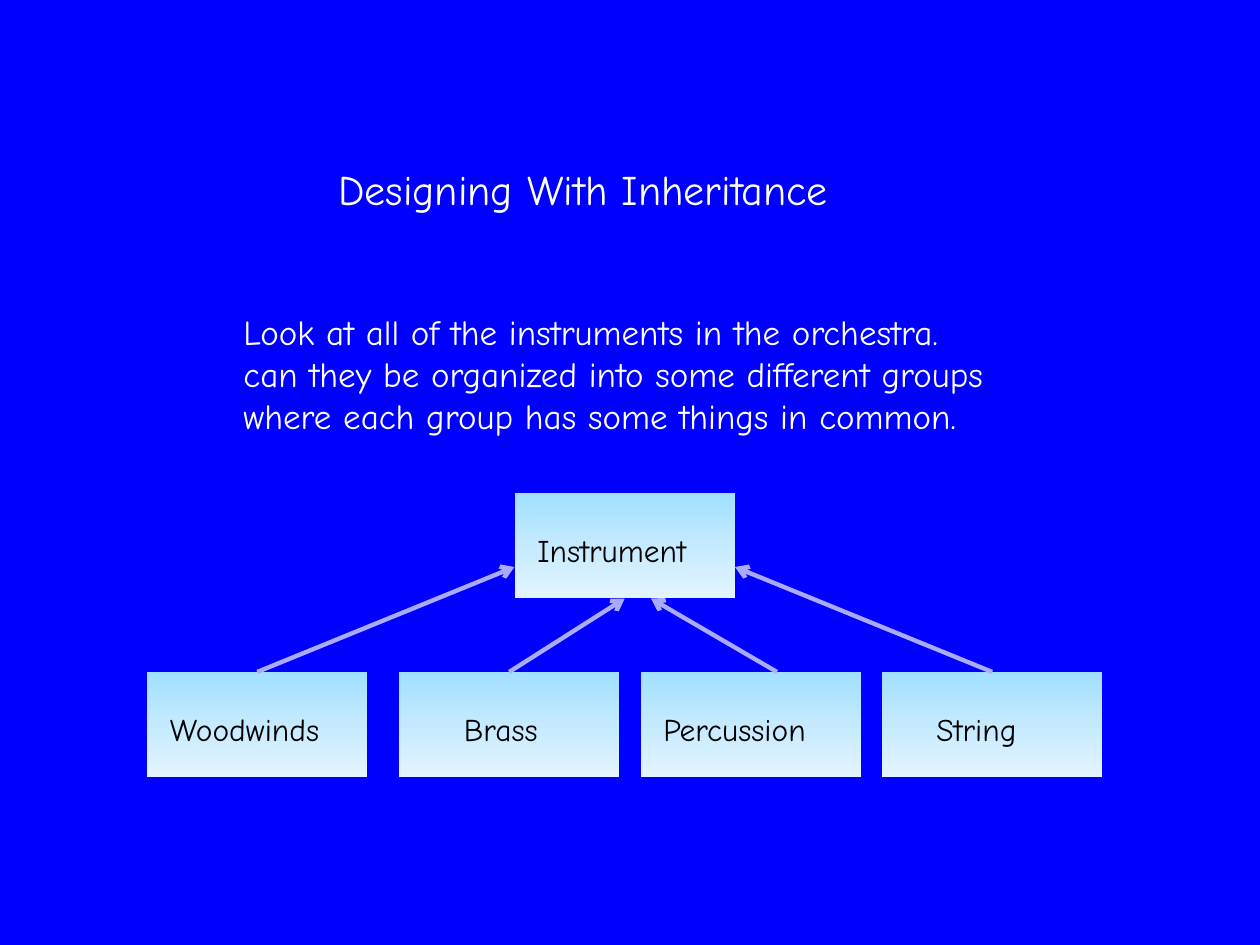
"""Build a slide showing an inheritance tree of orchestra instruments."""
import copy

import pptx
import pptx.dml.color
import pptx.enum.shapes
import pptx.enum.text
import pptx.oxml
import pptx.oxml.ns
import pptx.util

Pt = pptx.util.Pt
TOP, LEFT, BOTTOM, RIGHT = range(4)


def color(hex_text):
    return pptx.dml.color.RGBColor.from_string(hex_text)


def apply(target, values):
    for name, value in values.items():
        setattr(target, name, value)


class SlideBuilder:
    font_name = "Comic Neue"
    background = "0000FF"
    light = "FFFFFF"
    dark = "000000"
    arrow_color = "AAAAFF"
    gradient = ((0, "A0DFFF"), (0.5, "C5EAFF"), (1, "E3F4FF"))
    box_width, box_height = 126, 60
    frame_format = {
        "word_wrap": True,
        "auto_size": pptx.enum.text.MSO_AUTO_SIZE.NONE,
        "vertical_anchor": pptx.enum.text.MSO_ANCHOR.TOP,
        "margin_left": Pt(7.2),
        "margin_right": Pt(7.2),
        "margin_top": Pt(3.6),
        "margin_bottom": Pt(3.6),
    }

    def __init__(self, deck):
        self.slide = deck.slides.add_slide(deck.slide_layouts[5])
        fill = self.slide.background.fill
        fill.solid()
        fill.fore_color.rgb = color(self.background)

    def fill_text(self, box, lines, size, hex_text):
        frame = box.text_frame
        apply(frame, self.frame_format)
        for index, line in enumerate(lines):
            para = frame.add_paragraph() if index else frame.paragraphs[0]
            para.alignment = pptx.enum.text.PP_ALIGN.LEFT
            span = para.add_run()
            span.text = line
            apply(span.font, {"name": self.font_name, "size": Pt(size), "bold": False})
            span.font.color.rgb = color(hex_text)

    def title(self, text, left, top, width, height):
        box = self.slide.shapes.title
        apply(box, {"left": Pt(left), "top": Pt(top), "width": Pt(width), "height": Pt(height)})
        self.fill_text(box, [text], 24, self.light)

    def text(self, lines, left, top, width, height, size, hex_text):
        box = self.slide.shapes.add_textbox(Pt(left), Pt(top), Pt(width), Pt(height))
        self.fill_text(box, lines, size, hex_text)

    def class_box(self, name, left, top, indent):
        box = self.slide.shapes.add_shape(
            pptx.enum.shapes.MSO_SHAPE.RECTANGLE,
            Pt(left), Pt(top), Pt(self.box_width), Pt(self.box_height))
        box.shadow.inherit = False
        box.line.fill.background()
        box.fill.gradient()
        box.fill.gradient_angle = 270
        stops = box.element.spPr.find(".//" + pptx.oxml.ns.qn("a:gsLst"))
        stops.append(copy.deepcopy(stops[0]))
        for stop, (position, hex_text) in zip(box.fill.gradient_stops, self.gradient):
            stop.position = position
            stop.color.rgb = color(hex_text)
        self.text([name], left + indent, top + 18, self.box_width - indent, 29, 18, self.dark)
        return box

    def arrow(self, start, end, begin_box=None, end_box=None):
        connector = self.slide.shapes.add_connector(
            pptx.enum.shapes.MSO_CONNECTOR.STRAIGHT, *(Pt(value) for value in start + end))
        if begin_box is not None:
            connector.begin_connect(begin_box, TOP)
        if end_box is not None:
            connector.end_connect(end_box, BOTTOM)
        connector.line.width = Pt(2.5)
        connector.line.color.rgb = color(self.arrow_color)
        namespace = pptx.oxml.ns.nsdecls("a")
        properties = connector.element.spPr
        outline = properties.find(pptx.oxml.ns.qn("a:ln"))
        outline.append(pptx.oxml.parse_xml(f'<a:tailEnd {namespace} type="arrow"/>'))
        properties.append(pptx.oxml.parse_xml(f"<a:effectLst {namespace}/>"))


def main():
    deck = pptx.Presentation()
    apply(deck, {"slide_width": Pt(720), "slide_height": Pt(540)})
    page = SlideBuilder(deck)
    page.title("Designing With Inheritance", 186, 90, 328, 36)
    page.text([
        "Look at all of the instruments in the orchestra.",
        "can they be organized into some different groups",
        "where each group has some things in common.",
    ], 132, 174, 483, 80, 20, page.light)

    parent = page.class_box("Instrument", 294, 282, 6)
    row_top = 384
    families = (
        ("Woodwinds", 84, 6, 147, (294, 324)),
        ("Brass", 228, 30, 291, (357, 342)),
        ("Percussion", 366, 6, 444, (372, 342)),
        ("String", 504, 24, 567, (420, 324)),
    )
    parent_bottom = (294 + page.box_width / 2, 282 + page.box_height)
    for name, left, indent, start, end in families:
        box = page.class_box(name, left, row_top, indent)
        begin_box = box if start == left + page.box_width / 2 else None
        end_box = parent if end == parent_bottom else None
        page.arrow((start, row_top), end, begin_box, end_box)
    deck.save("out.pptx")


if __name__ == "__main__":
    main()
